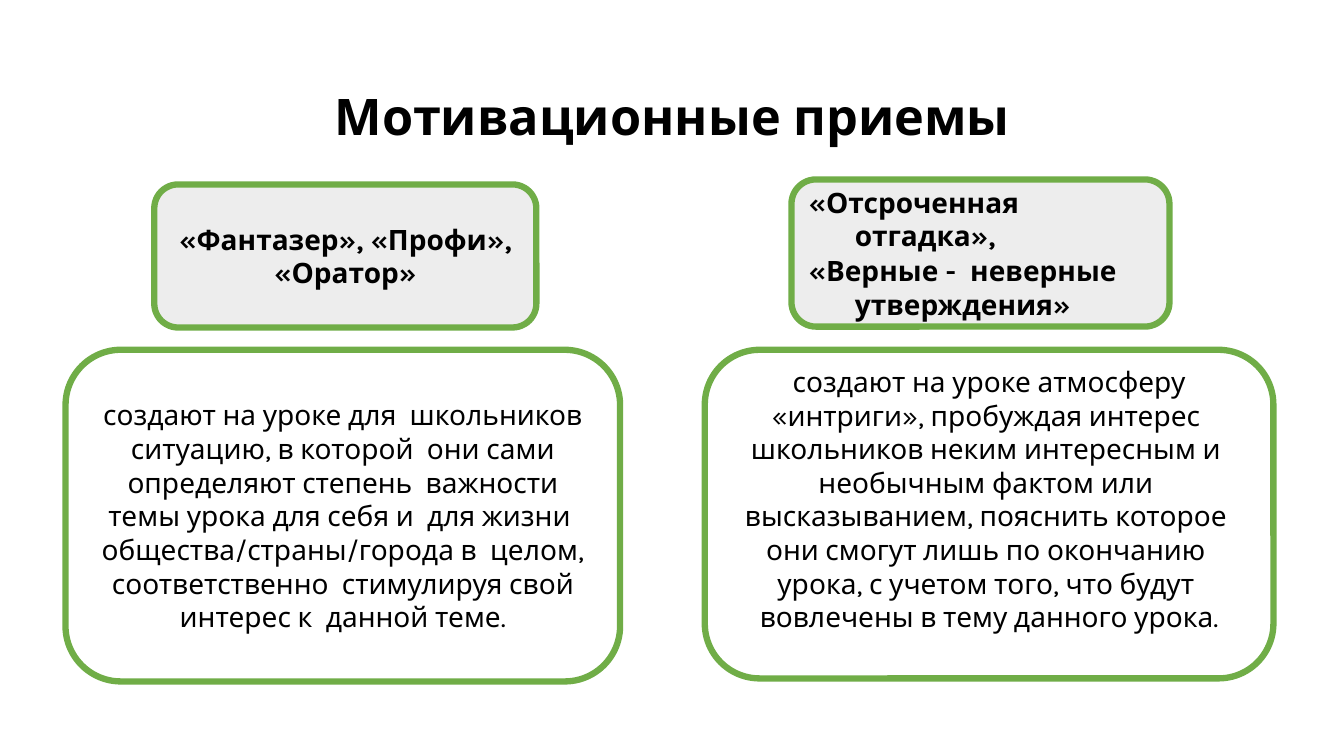
from pptx import Presentation
from pptx.dml.color import RGBColor
from pptx.enum.shapes import MSO_SHAPE as Shape
from pptx.enum.text import MSO_ANCHOR as Anchor, PP_ALIGN as Align
from pptx.util import Inches, Pt


def color(hex_value):
    return RGBColor.from_string(hex_value)


class SlideBuilder:
    """Holds the style and the current slide; lengths are percent of the slide."""

    FONT = "Karla"
    INK, GREEN, GRAY, WHITE = "000000", "70AD47", "EDEDED", "FFFFFF"

    def __init__(self, presentation):
        self.width = presentation.slide_width
        self.height = presentation.slide_height
        self.slide = presentation.slides.add_slide(presentation.slide_layouts[5])

    def area(self, left, top, width, height):
        return (int(self.width * left / 100), int(self.height * top / 100),
                int(self.width * width / 100), int(self.height * height / 100))

    def fill_paragraph(self, paragraph, text, size, bold, layout):
        paragraph.text = text
        for name, value in layout.items():
            setattr(paragraph, name, value)
        font_format = {"name": self.FONT, "size": Pt(size), "bold": bold}
        for name, value in font_format.items():
            setattr(paragraph.font, name, value)
        paragraph.font.color.rgb = color(self.INK)

    def title(self, text, area):
        shape = self.slide.shapes.title
        for name, value in zip(("left", "top", "width", "height"), self.area(*area)):
            setattr(shape, name, value)
        shape.text_frame.vertical_anchor = Anchor.MIDDLE
        self.fill_paragraph(shape.text_frame.paragraphs[0], text, 36, True,
                            {"alignment": Align.CENTER, "line_spacing": 0.9})

    def card(self, lines, area, fill, bold=False, align=Align.CENTER,
             hanging=0, gap=0, bottom=0.05):
        shape = self.slide.shapes.add_shape(Shape.ROUNDED_RECTANGLE, *self.area(*area))
        shape.shadow.inherit = False
        shape.fill.solid()
        shape.fill.fore_color.rgb = color(fill)
        shape.line.color.rgb = color(self.GREEN)
        shape.line.width = Pt(4.5)
        frame = shape.text_frame
        frame.word_wrap = True
        frame.vertical_anchor = Anchor.MIDDLE
        frame.margin_bottom = Inches(bottom)
        for index, line in enumerate(lines):
            paragraph = frame.add_paragraph() if index else frame.paragraphs[0]
            self.fill_paragraph(paragraph, line, 20, bold,
                                {"alignment": align,
                                 "space_before": Pt(gap if index else 0)})
            if hanging:
                properties = paragraph._p.get_or_add_pPr()
                properties.set("marL", str(Inches(hanging)))
                properties.set("indent", str(-Inches(hanging)))


def main():
    presentation = Presentation()
    presentation.slide_width = Inches(13.33)
    presentation.slide_height = Inches(7.5)
    builder = SlideBuilder(presentation)

    builder.title("Мотивационные приемы", (6.9, 6.13, 86.27, 19.33))

    # Names of the techniques
    builder.card(["«Отсроченная отгадка»,", "«Верные -  неверные утверждения»"],
                 (58.89, 23.73, 28.13, 19.47), builder.GRAY, bold=True,
                 align=Align.LEFT, hanging=0.46, gap=1)
    builder.card(["«Фантазер», «Профи»,", "«Оратор»"],
                 (11.48, 24.4, 28.43, 18.93), builder.GRAY, bold=True)

    # What the techniques do
    builder.card(["создают на уроке для  школьников ситуацию, в которой  они сами "
                  "определяют степень  важности темы урока для себя и  для жизни  "
                  "общества/страны/города в  целом, соответственно  стимулируя свой "
                  "интерес к  данной теме."],
                 (4.88, 46.27, 41.26, 43.87), builder.WHITE)
    builder.card(["создают на уроке атмосферу",
                  "«интриги», пробуждая интерес  школьников неким интересным и  "
                  "необычным фактом или  высказыванием, пояснить которое  они смогут "
                  "лишь по окончанию  урока, с учетом того, что будут  вовлечены в "
                  "тему данного урока."],
                 (52.44, 46.27, 42.31, 43.47), builder.WHITE, bottom=0.35)

    presentation.save("out.pptx")


if __name__ == "__main__":
    main()
